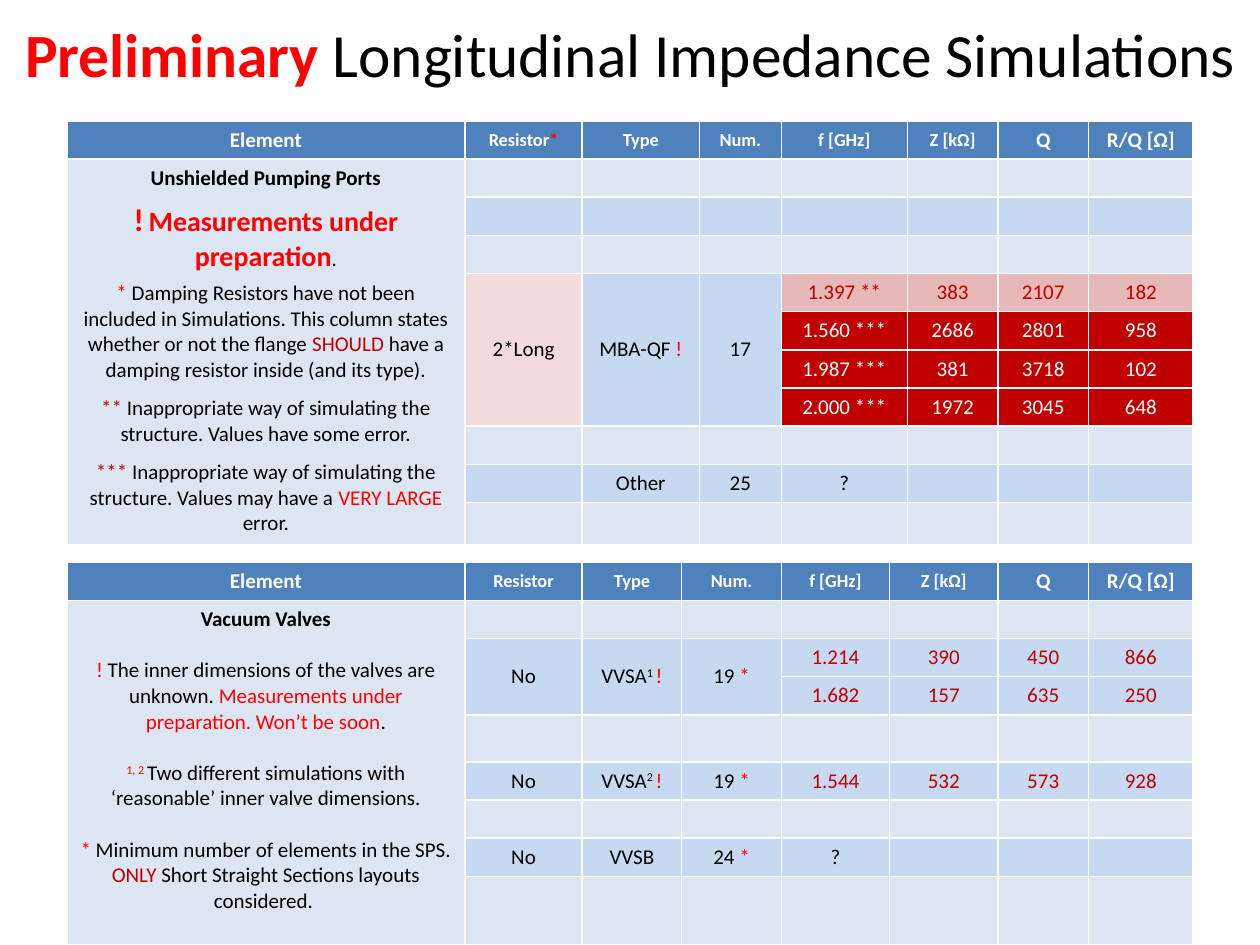
import pptx
import pptx.util
import pptx.dml.color
import pptx.enum.text
import pptx.oxml.ns
import lxml.etree

Pt = pptx.util.Pt
RGBColor = pptx.dml.color.RGBColor
CENTER = pptx.enum.text.PP_ALIGN.CENTER
MIDDLE = pptx.enum.text.MSO_ANCHOR.MIDDLE
TOP = pptx.enum.text.MSO_ANCHOR.TOP

FONT = "Calibri"
BLACK = RGBColor(0x00, 0x00, 0x00)
WHITE = RGBColor(0xFF, 0xFF, 0xFF)
RED = RGBColor(0xFF, 0x00, 0x00)
DARK_RED = RGBColor(0xC0, 0x00, 0x00)
BLUE = RGBColor(0x4F, 0x81, 0xBD)
LIGHT = RGBColor(0xDC, 0xE6, 0xF2)
MID = RGBColor(0xC6, 0xD9, 0xF1)
PINK = RGBColor(0xE6, 0xB9, 0xB8)
PALE_PINK = RGBColor(0xF2, 0xDC, 0xDB)

# Content: a run is (text, format); a bare string takes the defaults
IN_RED = {"color": RED}
IN_DARK_RED = {"color": DARK_RED}
RAISED = {"raised": True}
TITLE = [("Preliminary", {"color": RED, "bold": True}), " Longitudinal Impedance Simulations"]
HEADINGS = ["Element", "Resistor", "Type", "Num.", "f [GHz]", "Z [kΩ]", "Q", "R/Q [Ω]"]
SMALL_HEADINGS = range(1, 6)
EMPTY = [""] * 7

# Each note is (space before, runs)
PORT_NOTES = [
    (0, [("Unshielded Pumping Ports", {"bold": True})]),
    (6, [("!", {"color": RED, "bold": True, "size": 18}), " ",
         ("Measurements under preparation", {"color": RED, "bold": True, "size": 16}), "."]),
    (3.7, [("*", IN_RED), " Damping Resistors have not been included in Simulations. "
           "This column states whether or not the flange ", ("SHOULD", IN_DARK_RED),
           " have a damping resistor inside (and its type)."]),
    (7.3, [("**", IN_DARK_RED),
           " Inappropriate way of simulating the structure. Values have some error."]),
    (7.3, [("***", IN_DARK_RED),
           " Inappropriate way of simulating the structure. Values may have a ",
           ("VERY LARGE ", IN_RED), "error."]),
]
VALVE_NOTES = [
    (0, [("Vacuum Valves", {"bold": True})]),
    (14.65, [("!", IN_RED), " The inner dimensions of the valves are unknown. ",
             ("Measurements under preparation. Won’t be soon", IN_RED), "."]),
    (14.65, [("1, 2 ", {"color": RED, "raised": True}),
             "Two different simulations with ‘reasonable’ inner valve dimensions."]),
    (14.65, [("*", IN_RED), " Minimum number of elements in the SPS. ",
             ("ONLY", IN_DARK_RED), " Short Straight Sections layouts considered. "]),
]

# Each body row is (fill, colour of the four values, cells after the notes)
TABLES = [
    {
        "top": 69.1, "star": [("*", IN_RED)], "notes": PORT_NOTES,
        "widths": [227.5, 67, 67, 46.8, 72, 51.8, 51.8, 59.8],
        "heights": [21.8] * 10 + [24.4],
        "merge": (4, 7), "resistor_fill": PALE_PINK,
        "rows": [
            (LIGHT, BLACK, EMPTY),
            (MID, BLACK, EMPTY),
            (LIGHT, BLACK, EMPTY),
            (PINK, DARK_RED, ["2*Long", ["MBA-QF ", ("!", IN_RED)], "17",
                              "1.397 **", "383", "2107", "182"]),
            (DARK_RED, WHITE, ["", "", "", "1.560 ***", "2686", "2801", "958"]),
            (DARK_RED, WHITE, ["", "", "", "1.987 ***", "381", "3718", "102"]),
            (DARK_RED, WHITE, ["", "", "", "2.000 ***", "1972", "3045", "648"]),
            (LIGHT, BLACK, EMPTY),
            (MID, BLACK, ["", "Other", "25", "?", "", "", ""]),
            (LIGHT, BLACK, EMPTY),
        ],
    },
    {
        "top": 321.3, "star": [], "notes": VALVE_NOTES,
        "widths": [227.5, 67, 56.9, 56.9, 61.9, 61.9, 51.8, 59.8],
        "heights": [21.8] * 4 + [26.9] + [21.8] * 3 + [38.9],
        "merge": (2, 3), "resistor_fill": MID,
        "rows": [
            (LIGHT, BLACK, EMPTY),
            (MID, DARK_RED, ["No", ["VVSA", ("1 ", RAISED), ("!", IN_RED)],
                             ["19 ", ("*", IN_RED)], "1.214", "390", "450", "866"]),
            (MID, DARK_RED, ["", "", "", "1.682", "157", "635", "250"]),
            (LIGHT, BLACK, EMPTY),
            (MID, DARK_RED, ["No", ["VVSA", ("2 ", RAISED), ("!", IN_RED)],
                             ["19 ", ("*", IN_RED)], "1.544", "532", "573", "928"]),
            (LIGHT, BLACK, EMPTY),
            (MID, BLACK, ["No", "VVSB", ["24 ", ("*", IN_RED)], "?", "", "", ""]),
            (LIGHT, BLACK, EMPTY),
        ],
    },
]


def write_runs(para, runs, size=12, color=BLACK, bold=False):
    para.alignment = CENTER
    for item in runs:
        text, style = (item, {}) if isinstance(item, str) else item
        span = para.add_run()
        span.text = text
        span.font.name = FONT
        span.font.size = Pt(style.get("size", size))
        span.font.bold = style.get("bold", bold)
        span.font.color.rgb = style.get("color", color)
        if style.get("raised"):
            span.font._element.set("baseline", "30000")


def fill_cell(cell, fill, content="", **style):
    cell.fill.solid()
    cell.fill.fore_color.rgb = fill
    cell.vertical_anchor = MIDDLE
    para = cell.text_frame.paragraphs[0]
    if content:
        write_runs(para, [content] if isinstance(content, str) else content, **style)
    else:
        # An empty cell keeps the height of a 12 pt line
        lxml.etree.SubElement(para._p, pptx.oxml.ns.qn("a:endParaRPr"), sz="1200")


def add_impedance_table(slide, data):
    widths, heights, body = data["widths"], data["heights"], data["rows"]
    frame = slide.shapes.add_table(len(heights), len(widths), Pt(38.2), Pt(data["top"]),
                                   Pt(sum(widths)), Pt(sum(heights)))
    table = frame.table
    for column, width in zip(table.columns, widths):
        column.width = Pt(width)
    for row, height in zip(table.rows, heights):
        row.height = Pt(height)

    # Header
    for index, heading in enumerate(HEADINGS):
        runs = [heading] + (data["star"] if heading == "Resistor" else [])
        fill_cell(table.cell(0, index), BLUE, runs, color=WHITE, bold=True,
                  size=10.5 if index in SMALL_HEADINGS else 12)

    # Body: the last four columns hold the values
    first, last = data["merge"]
    for number, (fill, value_color, cells) in enumerate(body, 1):
        fill_cell(table.cell(number, 0), LIGHT)
        for index, content in enumerate(cells, 1):
            cell_fill, color = fill, value_color
            if index < 4:
                color = BLACK
                if first <= number <= last:
                    cell_fill = data["resistor_fill"] if index == 1 else MID
            fill_cell(table.cell(number, index), cell_fill, content, color=color)

    # Merged cells and notes
    for index in range(1, 4):
        table.cell(first, index).merge(table.cell(last, index))
    notes_cell = table.cell(1, 0)
    notes_cell.merge(table.cell(len(body), 0))
    notes_cell.vertical_anchor = TOP
    frame_text = notes_cell.text_frame
    for index, (gap, runs) in enumerate(data["notes"]):
        para = frame_text.add_paragraph() if index else frame_text.paragraphs[0]
        if not index:
            for end in para._p.findall(pptx.oxml.ns.qn("a:endParaRPr")):
                para._p.remove(end)
        para.space_before = Pt(gap)
        write_runs(para, runs)


deck = pptx.Presentation()
deck.slide_width, deck.slide_height = Pt(720), Pt(540)
page = deck.slides.add_slide(deck.slide_layouts[6])

# Title
title_box = page.shapes.add_textbox(Pt(0), Pt(0), Pt(720), Pt(60.5))
title_box.text_frame.word_wrap = True
title_box.text_frame.vertical_anchor = MIDDLE
write_runs(title_box.text_frame.paragraphs[0], TITLE, size=35.1)

# Tables
for table_data in TABLES:
    add_impedance_table(page, table_data)

deck.save("out.pptx")
